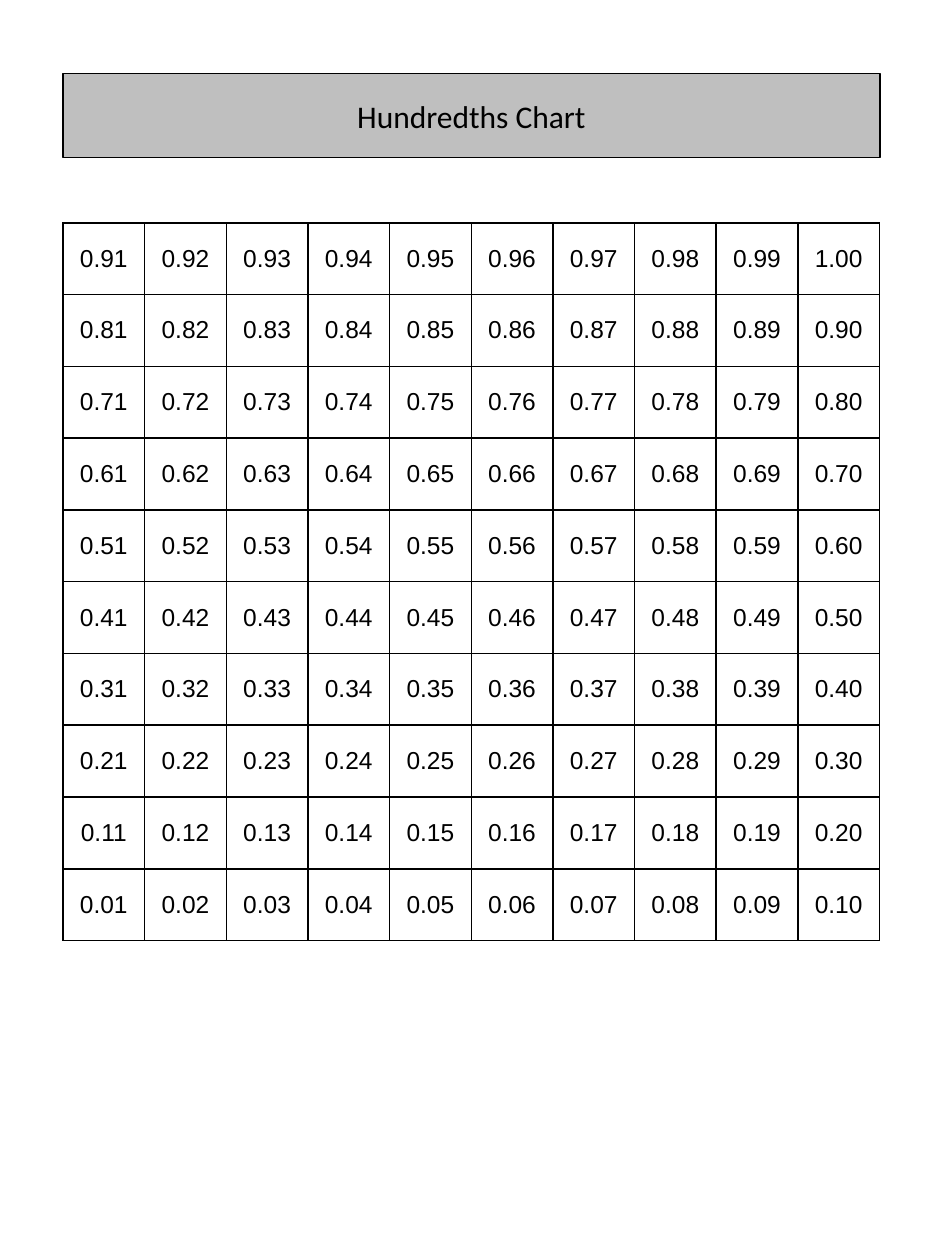
from lxml.etree import SubElement
from pptx import Presentation
from pptx.dml.color import RGBColor
from pptx.enum.text import MSO_ANCHOR, MSO_AUTO_SIZE, PP_ALIGN
from pptx.oxml.ns import qn
from pptx.util import Pt

BLACK = RGBColor(0, 0, 0)
GRAY = RGBColor(0xBF, 0xBF, 0xBF)
LEFT, SIZE = 36, 10
WIDE, HIGH = 46.68, 41.04


def style(para, font, size):
    para.alignment = PP_ALIGN.CENTER
    para.font.name = font
    para.font.size = Pt(size)
    para.font.color.rgb = BLACK


def border(cell):
    props = cell._tc.get_or_add_tcPr()
    for side in ("lnL", "lnR", "lnT", "lnB"):
        line = SubElement(props, qn("a:" + side), w=str(Pt(1)))
        fill = SubElement(line, qn("a:solidFill"))
        SubElement(fill, qn("a:srgbClr"), val=str(BLACK))


deck = Presentation()
deck.slide_width, deck.slide_height = Pt(540), Pt(720)
slide = deck.slides.add_slide(deck.slide_layouts[5])

# Title bar
title = slide.shapes.title
title.left, title.top = Pt(LEFT), Pt(42)
title.width, title.height = Pt(SIZE * WIDE), Pt(48)
title.fill.solid()
title.fill.fore_color.rgb = GRAY
title.line.color.rgb = BLACK
title.line.width = Pt(1)
frame = title.text_frame
frame.text = "Hundredths Chart"
frame.auto_size = MSO_AUTO_SIZE.NONE
frame.word_wrap = True
frame.vertical_anchor = MSO_ANCHOR.MIDDLE
style(frame.paragraphs[0], "Calibri", 18)

# Grid of hundredths, counting up from the bottom row
grid = slide.shapes.add_table(SIZE, SIZE, Pt(LEFT), Pt(127.3),
                              Pt(SIZE * WIDE), Pt(SIZE * HIGH)).table
grid.first_row = grid.horz_banding = False
for col in grid.columns:
    col.width = Pt(WIDE)
for r, row in enumerate(grid.rows):
    row.height = Pt(HIGH)
    for c, cell in enumerate(row.cells):
        count = (SIZE - 1 - r) * SIZE + c + 1
        cell.text = f"{count / 100:.2f}"
        cell.vertical_anchor = MSO_ANCHOR.MIDDLE
        style(cell.text_frame.paragraphs[0], "Arial", 14)
        border(cell)
        cell.fill.background()

deck.save("out.pptx")
